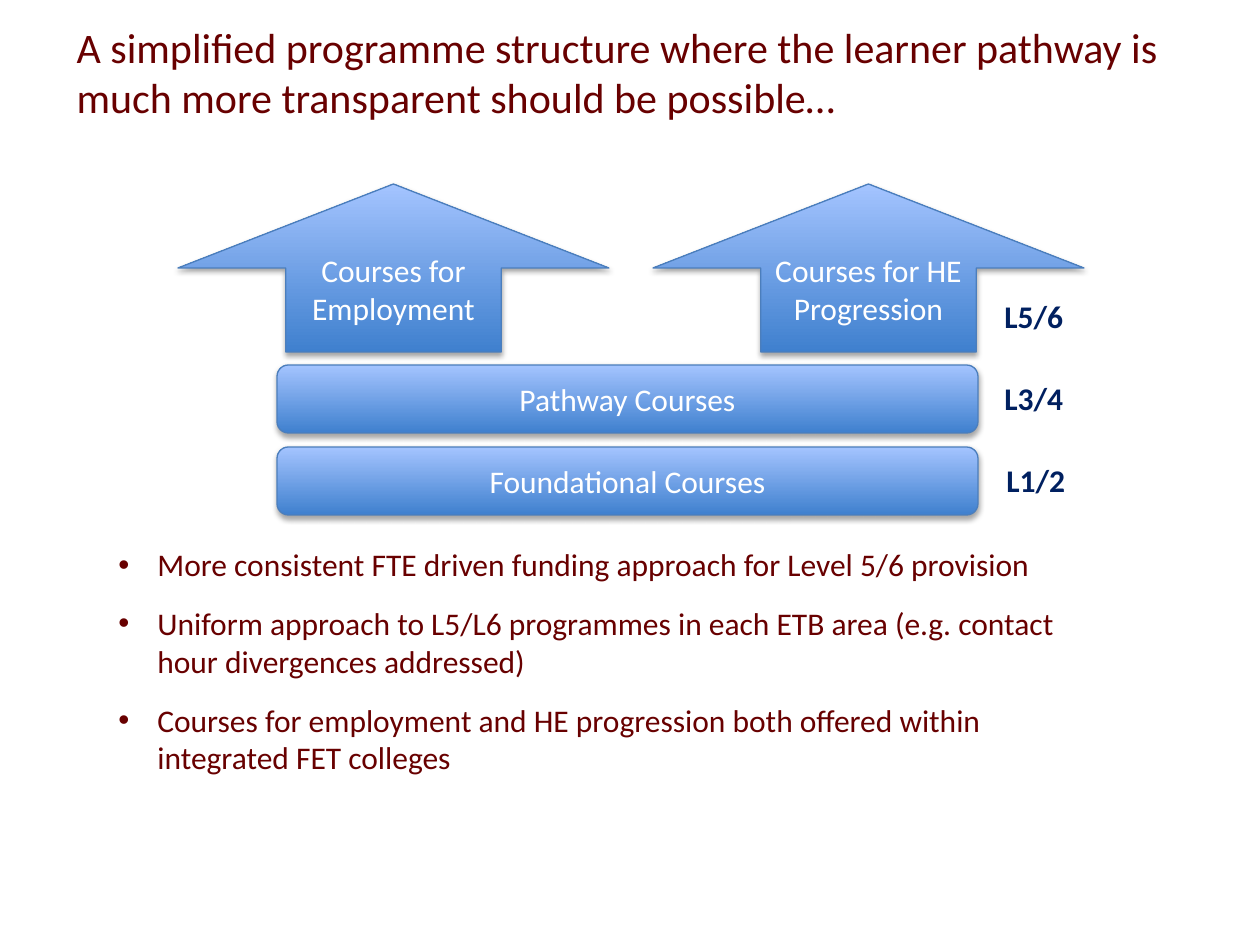
import dataclasses

import lxml.etree
import pptx
import pptx.dml.color
import pptx.enum.shapes
import pptx.enum.text
import pptx.oxml.ns
import pptx.util

SHAPE = pptx.enum.shapes.MSO_SHAPE
ALIGN = pptx.enum.text.PP_ALIGN
ANCHOR = pptx.enum.text.MSO_ANCHOR
FIT = pptx.enum.text.MSO_AUTO_SIZE
QN = pptx.oxml.ns.qn


@dataclasses.dataclass(frozen=True)
class Theme:
    font: str = "Calibri"
    head: int = 24
    body: int = 18
    text: str = "680000"
    light: str = "FFFFFF"
    level: str = "002060"
    low: str = "3F80CE"
    high: str = "A4C4FF"
    edge: str = "4B7EBC"
    shade: str = "000000"


THEME = Theme()
SCALE = 914400 / 126  # EMU in one px


def px(num):
    return pptx.util.Emu(round(num * SCALE))


def rgb(code):
    return pptx.dml.color.RGBColor.from_string(code)


def place(shape, box):
    shape.left, shape.top, shape.width, shape.height = map(px, box)


def style(para, size, color, bold=False, align=ALIGN.LEFT):
    para.alignment = align
    for run in para.runs:
        font = run.font
        font.name, font.size, font.bold = THEME.font, pptx.util.Pt(size), bold
        font.color.rgb = rgb(color)


def add_text(slide, box, text):
    shape = slide.shapes.add_textbox(*map(px, box))
    frame = shape.text_frame
    frame.word_wrap = True
    frame.auto_size = FIT.SHAPE_TO_FIT_TEXT
    frame.text = text
    return frame


def add_shadow(shape):
    shape.shadow.inherit = False
    effects = shape._element.spPr.find(QN("a:effectLst"))
    outer = lxml.etree.SubElement(
        effects, QN("a:outerShdw"), blurRad="40000", dist="23000",
        dir="5400000", rotWithShape="0")
    color = lxml.etree.SubElement(outer, QN("a:srgbClr"), val=THEME.shade)
    lxml.etree.SubElement(color, QN("a:alpha"), val="35000")


def add_block(slide, kind, box, text):
    shape = slide.shapes.add_shape(kind, *map(px, box))
    # Gradient rises from dark at the foot to light at the top
    shape.fill.gradient()
    shape.fill.gradient_angle = 90
    for stop, code in zip(shape.fill.gradient_stops, (THEME.low, THEME.high)):
        stop.color.rgb = rgb(code)
    shape.line.color.rgb = rgb(THEME.edge)
    shape.line.width = pptx.util.Pt(0.75)
    add_shadow(shape)
    frame = shape.text_frame
    frame.word_wrap = True
    frame.vertical_anchor = ANCHOR.MIDDLE
    frame.text = text
    style(frame.paragraphs[0], THEME.body, THEME.light, align=ALIGN.CENTER)


def add_title(slide, box, text):
    title = slide.shapes.title
    place(title, box)
    frame = title.text_frame
    frame.word_wrap = True
    frame.vertical_anchor = ANCHOR.TOP
    frame.auto_size = FIT.SHAPE_TO_FIT_TEXT
    frame.text = text
    style(frame.paragraphs[0], THEME.head, THEME.text)


def add_paths(slide, box):
    left, top, width, _ = box
    # Exit routes
    wide, high = 431, 168
    routes = ("Courses for Employment", "Courses for HE Progression")
    for col, text in enumerate(routes):
        spot = (left + col * 475, top, wide, high)
        add_block(slide, SHAPE.UP_ARROW, spot, text)

    # Lower stages
    step = 82
    for row, text in enumerate(("Pathway Courses", "Foundational Courses")):
        spot = (left + 99, top + 181 + row * step, 701, 68)
        add_block(slide, SHAPE.ROUNDED_RECTANGLE, spot, text)

    # Level labels, one for each tier
    for row, (text, shift) in enumerate((("L5/6", 0), ("L3/4", 0), ("L1/2", 2))):
        spot = (left + width - 92 + shift, top + 107 + row * step, 92, 50)
        frame = add_text(slide, spot, text)
        style(frame.paragraphs[0], THEME.body, THEME.level, bold=True)


def add_points(slide, box, points):
    frame = add_text(slide, box, "\n".join(points))
    dent = px(39)
    for para in frame.paragraphs:
        props = para._p.get_or_add_pPr()
        props.set("marL", str(dent))
        props.set("indent", str(-dent))
        lxml.etree.SubElement(props, QN("a:buFont"), typeface="Arial")
        lxml.etree.SubElement(props, QN("a:buChar"), char="•")
        para.space_after = pptx.util.Pt(12)
        style(para, THEME.body, THEME.text)


def main():
    deck = pptx.Presentation()
    deck.slide_width, deck.slide_height = px(1260), px(945)
    slide = deck.slides.add_slide(deck.slide_layouts.get_by_name("Title Only"))
    add_title(slide, (64, 15, 1142, 115),
              "A simplified programme structure where the learner pathway is "
              "much more transparent should be possible…")
    add_points(slide, (106, 539, 997, 246), (
        "More consistent FTE driven funding approach for Level 5/6 provision",
        "Uniform approach to L5/L6 programmes in each ETB area "
        "(e.g. contact hour divergences addressed)",
        "Courses for employment and HE progression both offered within "
        "integrated FET colleges",
    ))
    add_paths(slide, (178, 184, 906, 331))
    deck.save("out.pptx")


if __name__ == "__main__":
    main()
